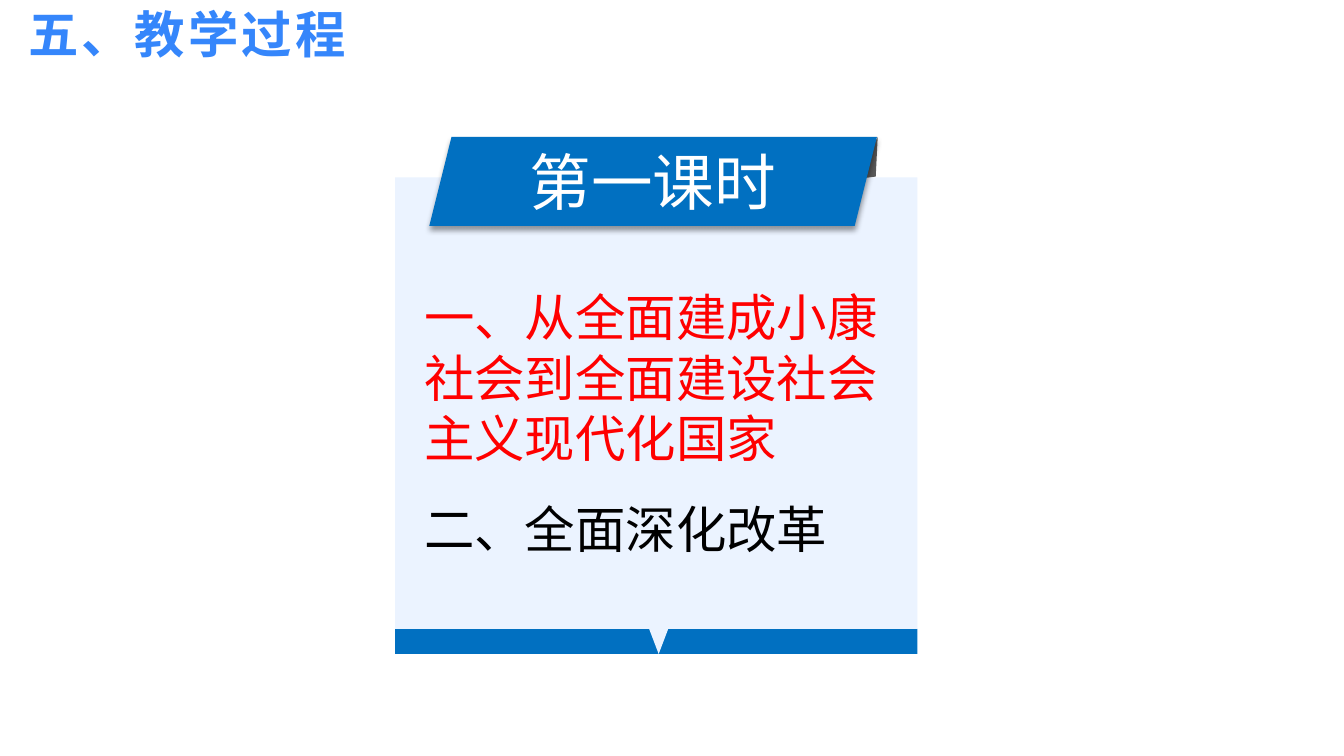
import pptx
import pptx.dml.color
import pptx.enum.shapes
import pptx.enum.text
import pptx.oxml
import pptx.oxml.ns
import pptx.util
from pptx.util import Cm

FONT = "Noto Sans CJK SC"
BLUE = "0170C1"
MSO_SHAPE = pptx.enum.shapes.MSO_SHAPE
ANCHOR = pptx.enum.text.MSO_ANCHOR
ALIGN = pptx.enum.text.PP_ALIGN


def rgb(color):
    return pptx.dml.color.RGBColor.from_string(color)


def paint(sp, color):
    sp.shadow.inherit = False
    sp.fill.solid()
    sp.fill.fore_color.rgb = rgb(color)
    sp.line.fill.background()
    return sp


def add_box(shapes, kind, left, top, width, height, color):
    sp = shapes.add_shape(kind, Cm(left), Cm(top), Cm(width), Cm(height))
    return paint(sp, color)


def add_outline(shapes, points, color):
    start, *rest = [(Cm(x), Cm(y)) for x, y in points]
    builder = shapes.build_freeform(*start, scale=1.0)
    builder.add_line_segments(rest, close=True)
    return paint(builder.convert_to_shape(), color)


def add_shadow(sp):
    effects = sp._element.spPr.find(pptx.oxml.ns.qn("a:effectLst"))
    effects.append(pptx.oxml.parse_xml(
        f'<a:outerShdw {pptx.oxml.ns.nsdecls("a")} blurRad="50800" dist="38100" '
        'dir="5400000" algn="t" rotWithShape="0"><a:srgbClr val="000000">'
        '<a:alpha val="40000"/></a:srgbClr></a:outerShdw>'))


def add_text_frame(slide, left, top, width, height):
    tf = slide.shapes.add_textbox(Cm(left), Cm(top), Cm(width), Cm(height)).text_frame
    tf.word_wrap = True
    return tf


def write(p, text, size=36, color="000000", bold=False, align=ALIGN.LEFT,
          line_spacing=None, tracking=None):
    p.alignment = align
    p.line_spacing = line_spacing
    r = p.add_run()
    r.text = text
    r.font.size = pptx.util.Pt(size)
    r.font.bold = bold
    r.font.color.rgb = rgb(color)
    r.font.name = FONT
    rPr = r._r.get_or_add_rPr()
    ea = pptx.oxml.parse_xml(
        f'<a:ea {pptx.oxml.ns.nsdecls("a")} typeface="{FONT}"/>')
    rPr.find(pptx.oxml.ns.qn("a:latin")).addnext(ea)
    if tracking:
        rPr.set("spc", str(round(tracking * 100)))


def add_title(slide):
    tf = add_text_frame(slide, 0.53, 0, 16.18, 1.68)
    tf.vertical_anchor = ANCHOR.BOTTOM
    tf.margin_left = tf.margin_right = Cm(0.18)
    tf.margin_top = tf.margin_bottom = Cm(0.08)
    write(tf.paragraphs[0], "五、教学过程", color="3586FB", bold=True, tracking=2.2)


def add_card(slide):
    left, right, top, strip, bottom = 9.96, 23.12, 4.47, 15.85, 16.48
    shapes = slide.shapes.add_group_shape().shapes

    # Bottom strip, covered by the panel and its pointer
    add_box(shapes, MSO_SHAPE.RECTANGLE, left, strip, right - left, bottom - strip, BLUE)
    add_outline(shapes, [(left, top), (right, top), (right, strip), (16.84, strip),
                         (16.6, bottom), (16.36, strip), (left, strip)], "EBF3FF")

    # Folded end behind the banner
    add_outline(shapes, [(22.12, 3.45), (21.54, 4.52), (22.07, 4.45)], "595959")

    # Banner
    banner = add_box(shapes, MSO_SHAPE.PARALLELOGRAM, 10.82, 3.45, 11.28, 2.24, BLUE)
    add_shadow(banner)
    tf = banner.text_frame
    tf.vertical_anchor = ANCHOR.MIDDLE
    write(tf.paragraphs[0], "第一课时", size=44, color="FFFFFF", align=ALIGN.CENTER)


def add_topics(slide):
    tf = add_text_frame(slide, 10.44, 7.09, 12.22, 7.19)
    tf.auto_size = pptx.enum.text.MSO_AUTO_SIZE.SHAPE_TO_FIT_TEXT
    write(tf.paragraphs[0], "一、从全面建成小康社会到全面建设社会主义现代化国家", color="FF0000")
    write(tf.add_paragraph(), "二、全面深化改革", line_spacing=1.5)


def main():
    prs = pptx.Presentation()
    prs.slide_width, prs.slide_height = Cm(33.87), Cm(19.05)
    slide = prs.slides.add_slide(prs.slide_layouts[6])
    add_title(slide)
    add_card(slide)
    add_topics(slide)
    prs.save("out.pptx")


if __name__ == "__main__":
    main()
